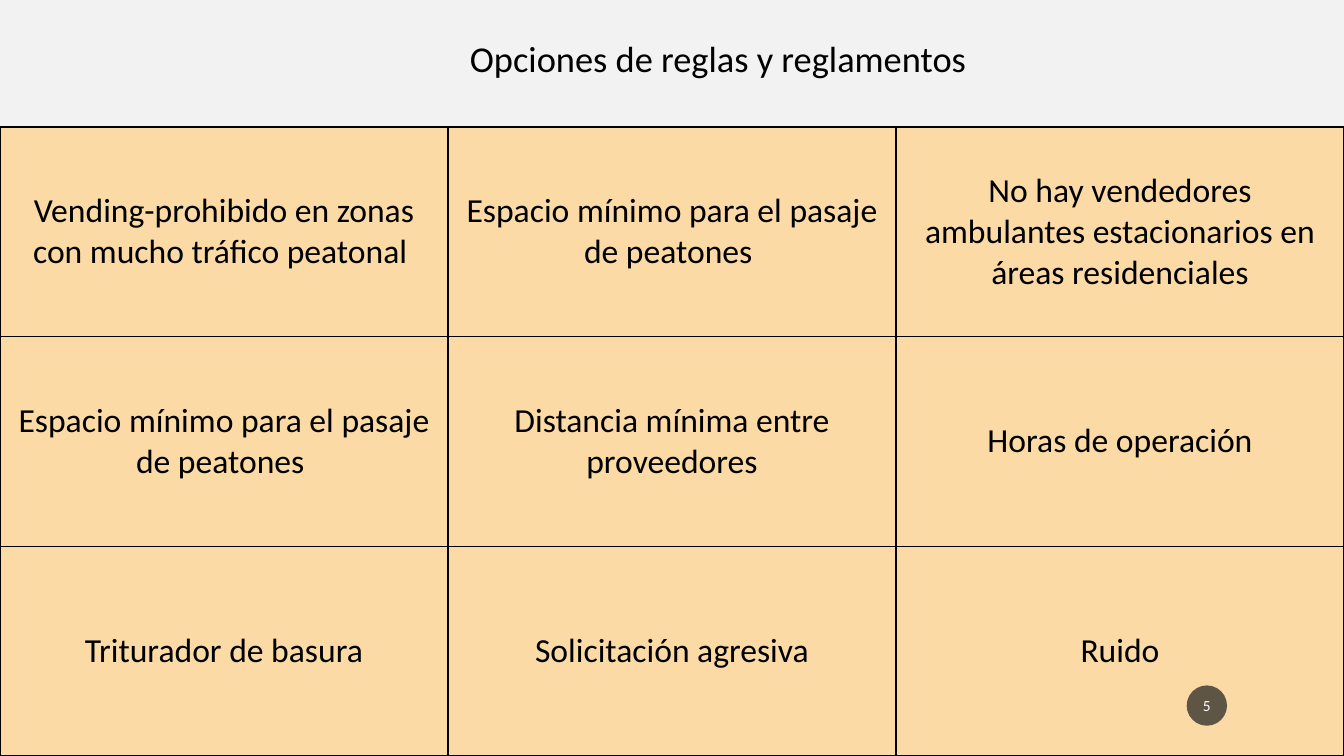
import pptx
import pptx.dml.color
import pptx.enum.shapes
import pptx.enum.text
import pptx.oxml
import pptx.oxml.ns
import pptx.util
from dataclasses import dataclass

ALIGN = pptx.enum.text.PP_ALIGN
MIDDLE = pptx.enum.text.MSO_ANCHOR.MIDDLE
INCH = pptx.util.Inches


@dataclass(frozen=True)
class Theme:
    font: str = "Calibri"
    back: str = "F2F2F2"
    cell: str = "FBDAA5"
    ink: str = "000000"
    badge: str = "1D1D1D"
    light: str = "FFFFFF"
    title: int = 26
    rule: int = 24
    page: int = 11
    edge: int = 1


THEME = Theme()
WIDE, HIGH = 13.33, 7.5
TOP = 1.26
RULES = [
    ["Vending-prohibido en zonas con mucho tráfico peatonal ",
     "Espacio mínimo para el pasaje de peatones ",
     "No hay vendedores ambulantes estacionarios en áreas residenciales"],
    ["Espacio mínimo para el pasaje de peatones ",
     "Distancia mínima entre proveedores",
     "Horas de operación"],
    ["Triturador de basura", "Solicitación agresiva", "Ruido"],
]


def paint(fill, color):
    fill.solid()
    fill.fore_color.rgb = pptx.dml.color.RGBColor.from_string(color)


def write(frame, text, size, color, align=ALIGN.CENTER):
    frame.text = text
    for para in frame.paragraphs:
        para.alignment = align
        for run in para.runs:
            run.font.name = THEME.font
            run.font.size = pptx.util.Pt(size)
            run.font.color.rgb = pptx.dml.color.RGBColor.from_string(color)


def border(cell):
    props = cell._tc.get_or_add_tcPr()
    width = pptx.util.Pt(THEME.edge)
    space = pptx.oxml.ns.nsdecls("a")
    for spot, side in enumerate(("lnL", "lnR", "lnT", "lnB")):
        line = pptx.oxml.parse_xml(
            f'<a:{side} {space} w="{width}"><a:solidFill>'
            f'<a:srgbClr val="{THEME.ink}"/></a:solidFill></a:{side}>')
        props.insert(spot, line)


def add_title(slide, text):
    title = slide.shapes.title
    title.left, title.top = INCH(4.56), INCH(0.3)
    title.width, title.height = INCH(5.2), INCH(0.54)
    frame = title.text_frame
    write(frame, text, THEME.title, THEME.ink, ALIGN.LEFT)
    frame.word_wrap = False
    frame.auto_size = pptx.enum.text.MSO_AUTO_SIZE.NONE
    frame.vertical_anchor = MIDDLE


def add_grid(slide, rules):
    rows, cols = len(rules), len(rules[0])
    grid = slide.shapes.add_table(
        rows, cols, 0, INCH(TOP), INCH(WIDE), INCH(HIGH - TOP)).table
    for row, texts in enumerate(rules):
        for col, text in enumerate(texts):
            cell = grid.cell(row, col)
            paint(cell.fill, THEME.cell)
            border(cell)
            cell.vertical_anchor = MIDDLE
            write(cell.text_frame, text, THEME.rule, THEME.ink)


def add_badge(slide, text):
    badge = slide.shapes.add_shape(
        pptx.enum.shapes.MSO_SHAPE.OVAL,
        INCH(11.77), INCH(6.8), INCH(0.4), INCH(0.4))
    badge.shadow.inherit = False
    badge.line.fill.background()
    paint(badge.fill, THEME.badge)
    tint = badge.fill._xPr.find(".//" + pptx.oxml.ns.qn("a:srgbClr"))
    tint.append(pptx.oxml.parse_xml(
        f'<a:alpha {pptx.oxml.ns.nsdecls("a")} val="70000"/>'))
    frame = badge.text_frame
    frame.margin_left = frame.margin_right = INCH(0.02)
    frame.vertical_anchor = MIDDLE
    write(frame, text, THEME.page, THEME.light)


def main():
    deck = pptx.Presentation()
    deck.slide_width, deck.slide_height = INCH(WIDE), INCH(HIGH)
    slide = deck.slides.add_slide(deck.slide_layouts.get_by_name("Title Only"))
    paint(slide.background.fill, THEME.back)
    add_title(slide, "Opciones de reglas y reglamentos")
    add_grid(slide, RULES)
    add_badge(slide, "5")
    deck.save("out.pptx")


if __name__ == "__main__":
    main()
